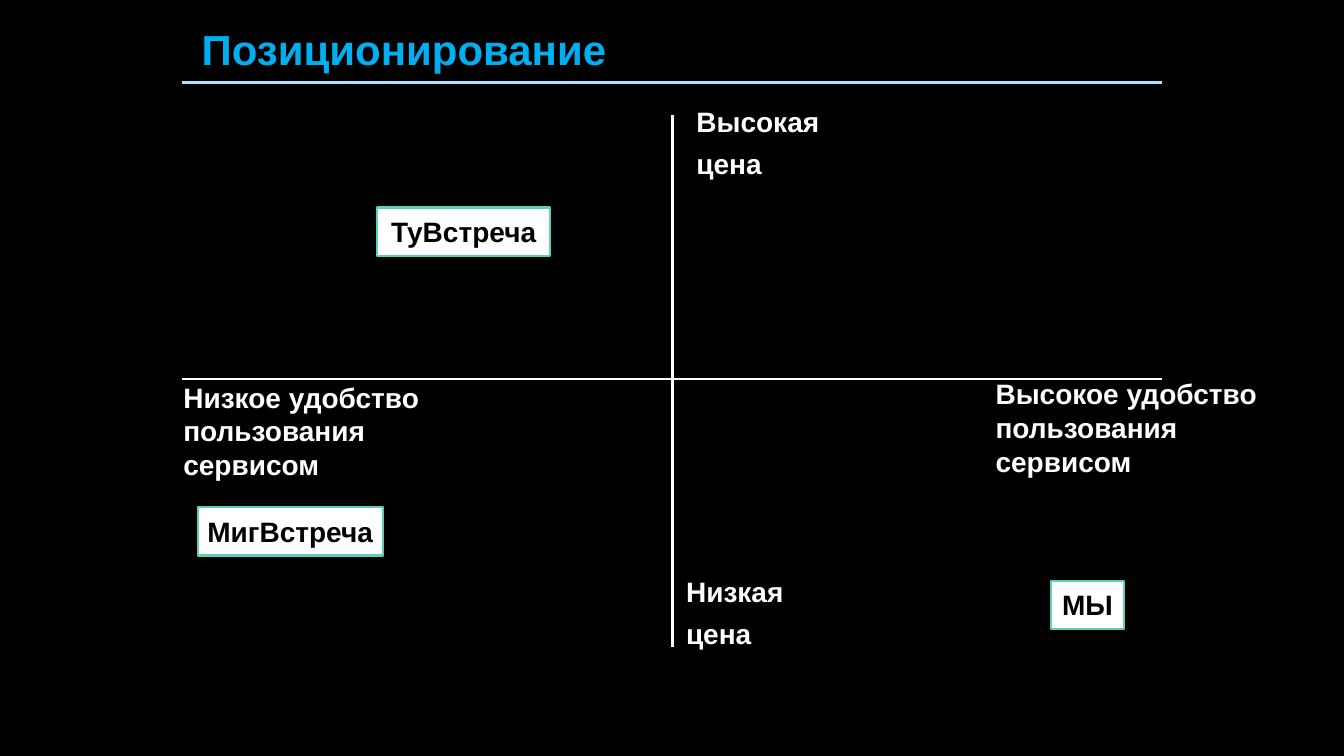
from lxml.etree import SubElement
from pptx import Presentation
from pptx.dml.color import RGBColor
from pptx.enum.shapes import MSO_CONNECTOR, MSO_SHAPE
from pptx.enum.text import MSO_ANCHOR, MSO_AUTO_SIZE, PP_ALIGN
from pptx.oxml.ns import qn
from pptx.util import Cm, Pt

BLACK, WHITE = "000000", "FFFFFF"
BLUE, PALE_BLUE, MINT = "00AFF0", "AAE2FF", "5AD0B8"
LEFT, CENTER, RIGHT = 4.6, 16.94, 29.28
TOP, MIDDLE, BOTTOM = 2.9, 9.55, 16.3


def color(value):
    """Turn a hex string into a colour."""
    return RGBColor.from_string(value)


class PositioningSlide:
    """Holds the style and the slide, and draws each kind of element."""

    font = "Arial"
    label_size = 20
    title_size = 30
    label_width, label_height = 8.5, 2.44
    brand_height = 1.22

    def __init__(self, presentation):
        """Add a title-only slide with a black background."""
        self.slide = presentation.slides.add_slide(presentation.slide_layouts[5])
        self.slide.background.fill.solid()
        self.slide.background.fill.fore_color.rgb = color(BLACK)

    def set_text(self, shape, text, ink, size, align=PP_ALIGN.LEFT, before=6, wrap=True):
        """Put formatted bold text into a shape."""
        frame = shape.text_frame
        frame.text = text
        frame.auto_size = MSO_AUTO_SIZE.NONE
        frame.word_wrap = wrap
        frame.vertical_anchor = MSO_ANCHOR.MIDDLE
        for paragraph in frame.paragraphs:
            paragraph.alignment = align
            paragraph.space_before = Pt(before)
            for run in paragraph.runs:
                run.font.name = self.font
                run.font.size = Pt(size)
                run.font.bold = True
                run.font.color.rgb = color(ink)

    def title(self, text, left, top, width, height):
        """Place and format the title placeholder."""
        heading = self.slide.shapes.title
        heading.left, heading.top = Cm(left), Cm(top)
        heading.width, heading.height = Cm(width), Cm(height)
        self.set_text(heading, text, BLUE, self.title_size, before=0)

    def line(self, x1, y1, x2, y2, ink):
        """Draw a straight line without a shadow."""
        rule = self.slide.shapes.add_connector(
            MSO_CONNECTOR.STRAIGHT, Cm(x1), Cm(y1), Cm(x2), Cm(y2))
        rule.line.color.rgb = color(ink)
        rule.line.width = Pt(2)
        SubElement(rule.element.spPr, qn("a:effectLst"))

    def axis_label(self, text, left, top):
        """Set the name of one end of an axis."""
        label = self.slide.shapes.add_textbox(
            Cm(left), Cm(top), Cm(self.label_width), Cm(self.label_height))
        self.set_text(label, text, WHITE, self.label_size)

    def brand(self, text, left, top, width):
        """Draw a framed box with the name of a service."""
        box = self.slide.shapes.add_shape(
            MSO_SHAPE.RECTANGLE, Cm(left), Cm(top), Cm(width), Cm(self.brand_height))
        box.shadow.inherit = False
        box.fill.solid()
        box.fill.fore_color.rgb = color(WHITE)
        box.line.color.rgb = color(MINT)
        box.line.width = Pt(1.5)
        self.set_text(box, text, BLACK, self.label_size, PP_ALIGN.CENTER, wrap=False)


def main():
    """Build the positioning map and save it."""
    presentation = Presentation()
    presentation.slide_width, presentation.slide_height = Cm(33.87), Cm(19.05)
    positioning = PositioningSlide(presentation)

    positioning.title("Позиционирование", 4.83, 0.41, 24.46, 1.65)
    positioning.line(LEFT, 2.08, RIGHT, 2.08, PALE_BLUE)
    positioning.line(LEFT, MIDDLE, RIGHT, MIDDLE, WHITE)
    positioning.line(CENTER, BOTTOM, CENTER, TOP, WHITE)

    for text, left, top in (
        ("Высокая\nцена", 17.3, 2.36),
        ("Низкая\nцена", 17.04, 14.22),
        ("Высокое удобство пользования сервисом", 24.84, 9.55),
        ("Низкое удобство пользования сервисом", 4.37, 9.63),
    ):
        positioning.axis_label(text, left, top)

    for text, left, top, width in (
        ("МигВстреча", 4.98, 12.78, 4.67),
        ("МЫ", 26.49, 14.63, 1.83),
        ("ТуВстреча", 9.5, 5.23, 4.37),
    ):
        positioning.brand(text, left, top, width)

    presentation.save("out.pptx")


if __name__ == "__main__":
    main()
